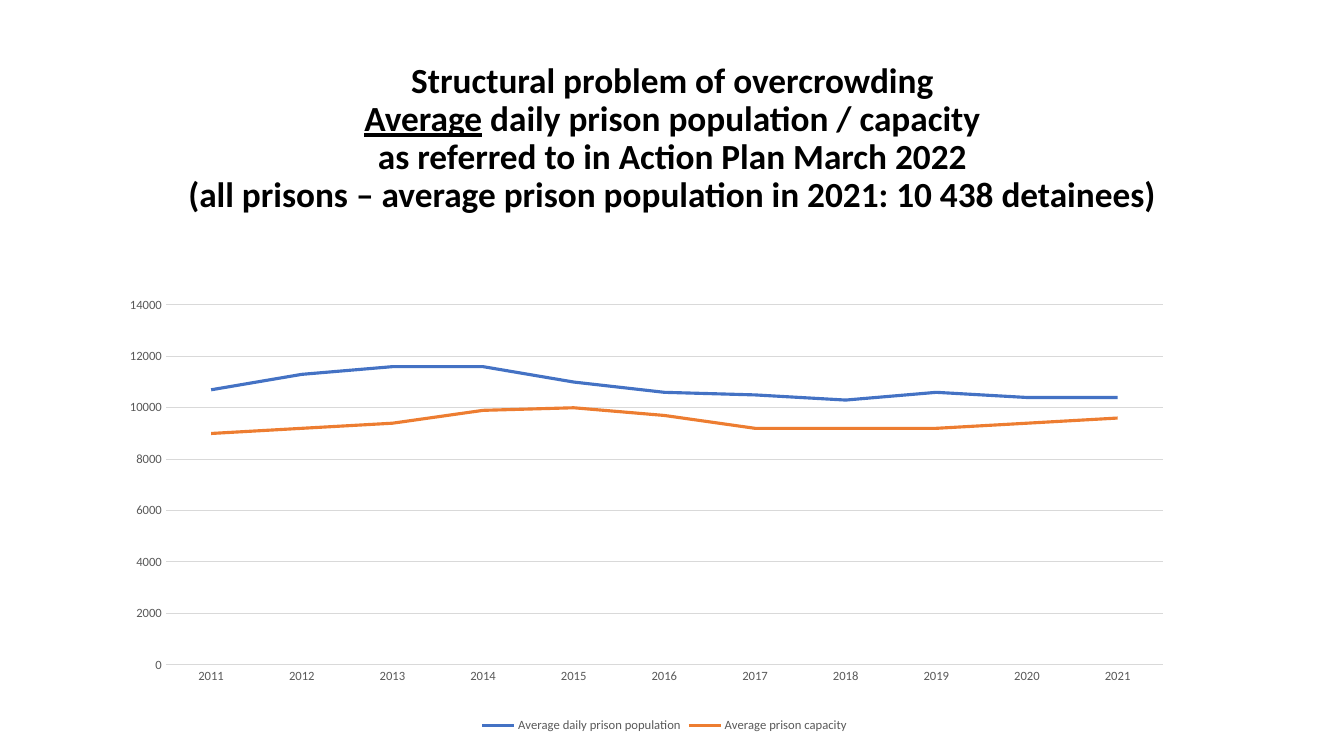
from lxml import etree
from pptx import Presentation
from pptx.chart.data import CategoryChartData
from pptx.dml.color import RGBColor
from pptx.enum.chart import XL_CHART_TYPE, XL_LEGEND_POSITION, XL_MARKER_STYLE, XL_TICK_MARK
from pptx.enum.text import MSO_ANCHOR, MSO_AUTO_SIZE, PP_ALIGN
from pptx.oxml.ns import qn
from pptx.util import Inches, Pt

COLORS = {
    "title": "000000",
    "label": "595959",
    "grid": "D9D9D9",
    "population": "4472C4",
    "capacity": "ED7D31",
}
FONT = "Calibri"
HEADING = [
    [("Structural problem of overcrowding", False)],
    [("Average", True), (" daily prison population / capacity", False)],
    [("as referred to in Action Plan March 2022", False)],
    [("(all prisons – average prison population in 2021: 10 438 detainees)", False)],
]
YEARS = [str(year) for year in range(2011, 2022)]
SERIES = [
    ("Average daily prison population", "population",
     [10700, 11300, 11600, 11600, 11000, 10600, 10500, 10300, 10600, 10400, 10400]),
    ("Average prison capacity", "capacity",
     [9000, 9200, 9400, 9900, 10000, 9700, 9200, 9200, 9200, 9400, 9600]),
]
PLOT_AREA = {
    "layoutTarget": "inner", "xMode": "edge", "yMode": "edge",
    "x": 0.07, "y": 0.1, "w": 0.86, "h": 0.75,
}


def set_all(target, values):
    for name, value in values.items():
        setattr(target, name, value)


def format_font(font, size, color, **extra):
    set_all(font, {"name": FONT, "size": Pt(size), **extra})
    font.color.rgb = RGBColor.from_string(COLORS[color])


def format_line(line, color, width):
    line.color.rgb = RGBColor.from_string(COLORS[color])
    line.width = Pt(width)


def place(shape, left, top, width, height):
    set_all(shape, {
        "left": Inches(left), "top": Inches(top),
        "width": Inches(width), "height": Inches(height),
    })


def write_heading(title):
    place(title, 0.92, 0.61, 11.5, 1.54)
    set_all(title.text_frame, {
        "word_wrap": True,
        "auto_size": MSO_AUTO_SIZE.NONE,
        "vertical_anchor": MSO_ANCHOR.MIDDLE,
    })
    paragraph = title.text_frame.paragraphs[0]
    set_all(paragraph, {"alignment": PP_ALIGN.CENTER, "line_spacing": 0.9})
    format_font(paragraph.font, 25.2, "title", bold=True)
    for index, line in enumerate(HEADING):
        if index:
            paragraph.add_line_break()
        for text, underlined in line:
            run = paragraph.add_run()
            run.text = text
            format_font(run.font, 25.2, "title", bold=True, underline=underlined)


def fix_plot_area(chart):
    plot_area = chart.plots[0]._element.getparent()
    layout = plot_area.find(qn("c:layout"))
    if layout is None:
        layout = etree.Element(qn("c:layout"))
        plot_area.insert(0, layout)
    manual = etree.SubElement(layout, qn("c:manualLayout"))
    for name, value in PLOT_AREA.items():
        etree.SubElement(manual, qn(f"c:{name}")).set("val", str(value))


def format_axes(chart):
    years, detainees = chart.category_axis, chart.value_axis
    for axis in (years, detainees):
        set_all(axis, {
            "major_tick_mark": XL_TICK_MARK.NONE,
            "minor_tick_mark": XL_TICK_MARK.NONE,
        })
        format_font(axis.tick_labels.font, 9, "label")
    format_line(years.format.line, "grid", 0.75)
    set_all(detainees, {
        "minimum_scale": 0, "maximum_scale": 14000,
        "major_unit": 2000, "has_major_gridlines": True,
    })
    detainees.format.line.fill.background()
    format_line(detainees.major_gridlines.format.line, "grid", 0.75)


def add_prison_chart(slide):
    data = CategoryChartData(number_format="General")
    data.categories = YEARS
    for name, _, values in SERIES:
        data.add_series(name, values)
    chart = slide.shapes.add_chart(
        XL_CHART_TYPE.LINE, Inches(0.84), Inches(2.55), Inches(11.5), Inches(4.76), data
    ).chart
    set_all(chart, {"has_title": False, "has_legend": True})
    format_font(chart.font, 10, "title")
    set_all(chart.legend, {
        "position": XL_LEGEND_POSITION.BOTTOM, "include_in_layout": False,
    })
    format_font(chart.legend.font, 9, "label")
    chart.plots[0].vary_by_categories = False
    for series, (_, color, _) in zip(chart.plots[0].series, SERIES):
        series.smooth = False
        series.marker.style = XL_MARKER_STYLE.NONE
        format_line(series.format.line, color, 2.25)
    format_axes(chart)
    fix_plot_area(chart)


def main():
    deck = Presentation()
    set_all(deck, {"slide_width": Inches(13.33), "slide_height": Inches(7.5)})
    slide = deck.slides.add_slide(deck.slide_layouts[5])
    write_heading(slide.shapes.title)
    add_prison_chart(slide)
    deck.save("out.pptx")


if __name__ == "__main__":
    main()
